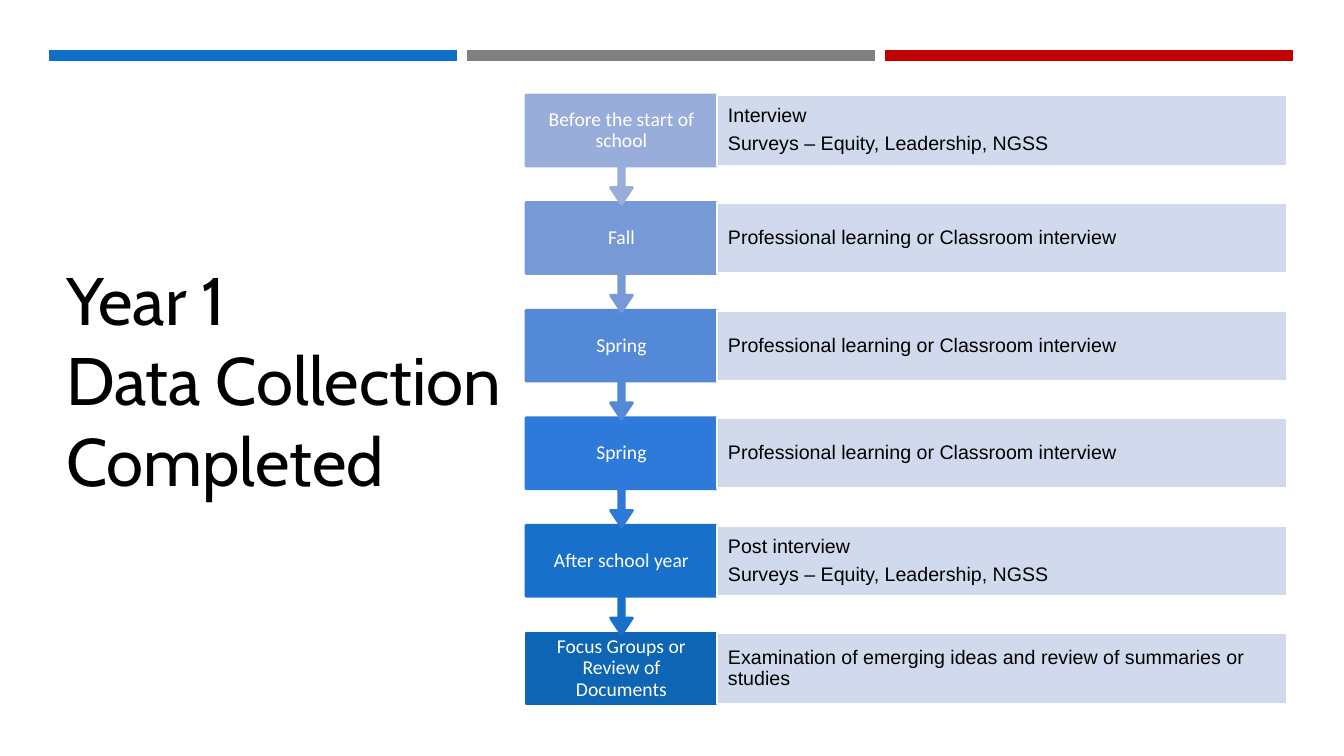
import pptx
import pptx.util
import pptx.dml.color
import pptx.enum.shapes
import pptx.enum.text
import pptx.oxml
import pptx.oxml.ns

RGB = pptx.dml.color.RGBColor
SHAPE = pptx.enum.shapes.MSO_SHAPE
ALIGN = pptx.enum.text.PP_ALIGN
ANCHOR = pptx.enum.text.MSO_ANCHOR

BLACK = RGB(0x00, 0x00, 0x00)
WHITE = RGB(0xFF, 0xFF, 0xFF)
PALE_BLUE = RGB(0xCC, 0xD5, 0xEA)
BAR_COLOURS = [RGB(0x0F, 0x6F, 0xC6), RGB(0x7F, 0x7F, 0x7F), RGB(0xC0, 0x00, 0x00)]

TITLE = "Year 1 \vData Collection\vCompleted"
VISIT = ["Professional learning or Classroom interview"]
SURVEYS = "Surveys – Equity, Leadership, NGSS"
STAGES = [
    ("Before the start of school", ["Interview", SURVEYS], RGB(0x98, 0xAD, 0xD9)),
    ("Fall", VISIT, RGB(0x77, 0x9A, 0xD6)),
    ("Spring", VISIT, RGB(0x54, 0x89, 0xD7)),
    ("Spring", VISIT, RGB(0x2D, 0x7A, 0xDA)),
    ("After school year", ["Post interview", SURVEYS], RGB(0x19, 0x70, 0xCB)),
    ("Focus Groups or Review of Documents",
     ["Examination of emerging ideas and review of summaries or studies"],
     RGB(0x0E, 0x65, 0xB4)),
]

SLIDE_W, SLIDE_H = 1344, 756
BAR_LEFT, BAR_TOP, BAR_W, BAR_H, BAR_GAP = 49, 50, 408, 11, 10
FIRST_TOP, LAST_TOP = 95, 633
STAGE_LEFT, STAGE_W, BOX_H, CALLOUT_H = 526, 191, 71, 109
DETAIL_LEFT, DETAIL_W = STAGE_LEFT + STAGE_W, 570
ARROW_ADJUSTMENTS = [0.05, 0.1, 0.15, 0.65]


def px(length):
    return round(length * 914400 / 100.8)


def add_box(slide, kind, left, top, width, height, fill, line=None):
    box = slide.shapes.add_shape(kind, px(left), px(top), px(width), px(height))
    box.shadow.inherit = False
    box.fill.solid()
    box.fill.fore_color.rgb = fill
    if line is None:
        box.line.fill.background()
    else:
        box.line.color.rgb = line
        box.line.width = pptx.util.Pt(2)
    return box


def write(box, lines, font, colour, align, side):
    frame = box.text_frame
    frame.word_wrap = True
    frame.vertical_anchor = ANCHOR.MIDDLE
    frame.margin_left = frame.margin_right = px(side)
    frame.margin_top = frame.margin_bottom = px(4)
    frame.text = "\n".join(lines)
    for paragraph in frame.paragraphs:
        paragraph.alignment = align
        paragraph.line_spacing = 0.9
        paragraph.space_after = pptx.util.Pt(5)
        paragraph.font.name = font
        paragraph.font.size = pptx.util.Pt(14)
        paragraph.font.color.rgb = colour


def set_opacity(box, percent):
    colour = box.fill._xPr.find(".//" + pptx.oxml.ns.qn("a:srgbClr"))
    alpha = pptx.oxml.parse_xml(
        f'<a:alpha {pptx.oxml.ns.nsdecls("a")} val="{percent * 1000}"/>')
    colour.append(alpha)


def add_title(slide):
    title = slide.shapes.title
    title.left, title.top, title.width, title.height = px(56), px(71), px(518), px(616)
    frame = title.text_frame
    frame.text = TITLE
    frame.word_wrap = True
    frame.auto_size = pptx.enum.text.MSO_AUTO_SIZE.NONE
    frame.vertical_anchor = ANCHOR.MIDDLE
    heading = frame.paragraphs[0]
    heading.alignment = ALIGN.LEFT
    heading.font.name = "Cabin"
    heading.font.size = pptx.util.Pt(48)
    heading.font.color.rgb = BLACK


def add_stage(slide, index):
    label, details, colour = STAGES[index]
    last = len(STAGES) - 1
    top = FIRST_TOP + index * (LAST_TOP - FIRST_TOP) / last
    if index == last:
        stage = add_box(slide, SHAPE.RECTANGLE, STAGE_LEFT, top, STAGE_W, BOX_H, colour, colour)
    else:
        stage = add_box(slide, SHAPE.DOWN_ARROW_CALLOUT, STAGE_LEFT, top,
                        STAGE_W, CALLOUT_H, colour, colour)
        for position, value in enumerate(ARROW_ADJUSTMENTS):
            stage.adjustments[position] = value
    write(stage, [label], "Calibri", WHITE, ALIGN.CENTER, 13)
    detail = add_box(slide, SHAPE.RECTANGLE, DETAIL_LEFT, top, DETAIL_W, BOX_H, PALE_BLUE, WHITE)
    set_opacity(detail, 90)
    write(detail, details, "Arial", BLACK, ALIGN.LEFT, 11)


def main():
    deck = pptx.Presentation()
    deck.slide_width, deck.slide_height = px(SLIDE_W), px(SLIDE_H)
    slide = deck.slides.add_slide(deck.slide_layouts[5])
    for column, colour in enumerate(BAR_COLOURS):
        add_box(slide, SHAPE.RECTANGLE, BAR_LEFT + column * (BAR_W + BAR_GAP),
                BAR_TOP, BAR_W, BAR_H, colour)
    add_title(slide)
    for index in reversed(range(len(STAGES))):
        add_stage(slide, index)
    deck.save("out.pptx")


if __name__ == "__main__":
    main()
